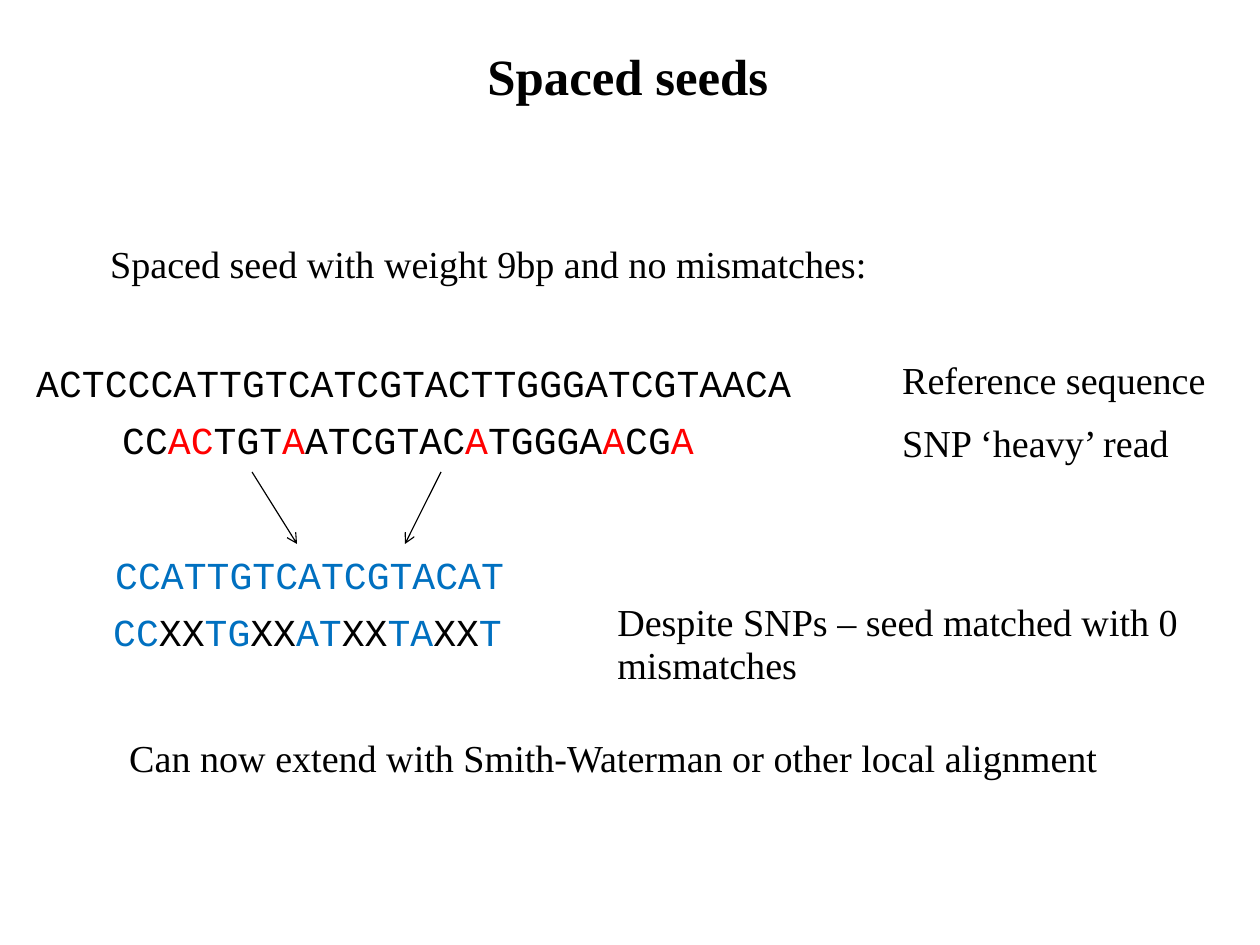
import itertools

import pptx
import pptx.util
import pptx.dml.color
import pptx.enum.shapes
import pptx.enum.text
import pptx.oxml
import pptx.oxml.ns

HUES = {"ink": "000000", "snp": "FF0000", "seed": "0070C0"}
SERIF, MONO = "Times New Roman", "Courier New"


class Page:
    """Holds the style and the current slide, and draws each kind of element."""

    unit = 8000
    size = 24
    pitch = 0.93

    def __init__(self, deck, width, height):
        deck.slide_width, deck.slide_height = self.emu(width, height)
        self.slide = deck.slides.add_slide(deck.slide_layouts[5])

    def emu(self, *marks):
        return [pptx.util.Emu(mark * self.unit) for mark in marks]

    def hue(self, name):
        return pptx.dml.color.RGBColor.from_string(HUES[name])

    def fill(self, frame, parts, hues, face, size, bold=False):
        para = frame.paragraphs[0]
        para.line_spacing = self.pitch
        for part, hue in zip(parts, itertools.cycle(hues)):
            run = para.add_run()
            run.text = part
            run.font.name = face
            run.font.size = pptx.util.Pt(size)
            run.font.bold = bold
            run.font.color.rgb = self.hue(hue)
        return para

    def title(self, text, left, top, width, height):
        shape = self.slide.shapes.title
        shape.left, shape.top, shape.width, shape.height = self.emu(left, top, width, height)
        frame = shape.text_frame
        frame.margin_left = frame.margin_right = frame.margin_top = frame.margin_bottom = 0
        frame.vertical_anchor = pptx.enum.text.MSO_ANCHOR.MIDDLE
        frame.auto_size = pptx.enum.text.MSO_AUTO_SIZE.NONE
        para = self.fill(frame, [text], ["ink"], SERIF, 32, True)
        para.alignment = pptx.enum.text.PP_ALIGN.CENTER

    def text(self, parts, left, top, width, height=55, hues=("ink",), face=SERIF):
        frame = self.slide.shapes.add_textbox(*self.emu(left, top, width, height)).text_frame
        frame.word_wrap = True
        frame.auto_size = pptx.enum.text.MSO_AUTO_SIZE.SHAPE_TO_FIT_TEXT
        self.fill(frame, parts, hues, face, self.size)

    def bases(self, code, left, top, width, *hues):
        self.text(code.split("|"), left, top, width, hues=hues, face=MONO)

    def arrow(self, *ends):
        kind = pptx.enum.shapes.MSO_CONNECTOR.STRAIGHT
        link = self.slide.shapes.add_connector(kind, *self.emu(*ends))
        link.line.color.rgb = self.hue("ink")
        link.line.width = pptx.util.Pt(0.75)
        props = link._element.spPr
        space = pptx.oxml.ns.nsdecls("a")
        line = props.find(pptx.oxml.ns.qn("a:ln"))
        line.append(pptx.oxml.parse_xml(f'<a:tailEnd {space} type="arrow"/>'))
        props.append(pptx.oxml.parse_xml(f"<a:effectLst {space}/>"))


def main():
    deck = pptx.Presentation()
    page = Page(deck, 1260, 945)
    page.title("Spaced seeds", 90, 0, 1076, 158)
    page.bases("CC|AC|TGT|A|ATCGTAC|A|TGGGA|A|CG|A", 111, 415, 828, "ink", "snp")
    page.text(["Spaced seed with weight 9bp and no mismatches:"], 99, 239, 801)

    for start, end in ((252, 297), (441, 405)):
        page.arrow(start, 472, end, 544)

    page.bases("ACTCCCATTGTCATCGTACTTGGGATCGTAACA", 25, 358, 1062, "ink")
    page.text(["SNP ‘heavy’ read"], 891, 418, 369)
    page.text(["Reference sequence"], 891, 355, 369)
    page.text(["Can now extend with Smith-Waterman or other local alignment"], 118, 733, 1092)
    page.text(["Despite SNPs – seed matched with 0 mismatches"], 606, 597, 654, 97)
    page.bases("CCATTGTCATCGTACAT", 104, 550, 495, "seed")
    page.bases("CC|XX|TG|XX|AT|XX|TA|XX|T", 102, 607, 415, "seed", "ink")
    deck.save("out.pptx")


if __name__ == "__main__":
    main()
